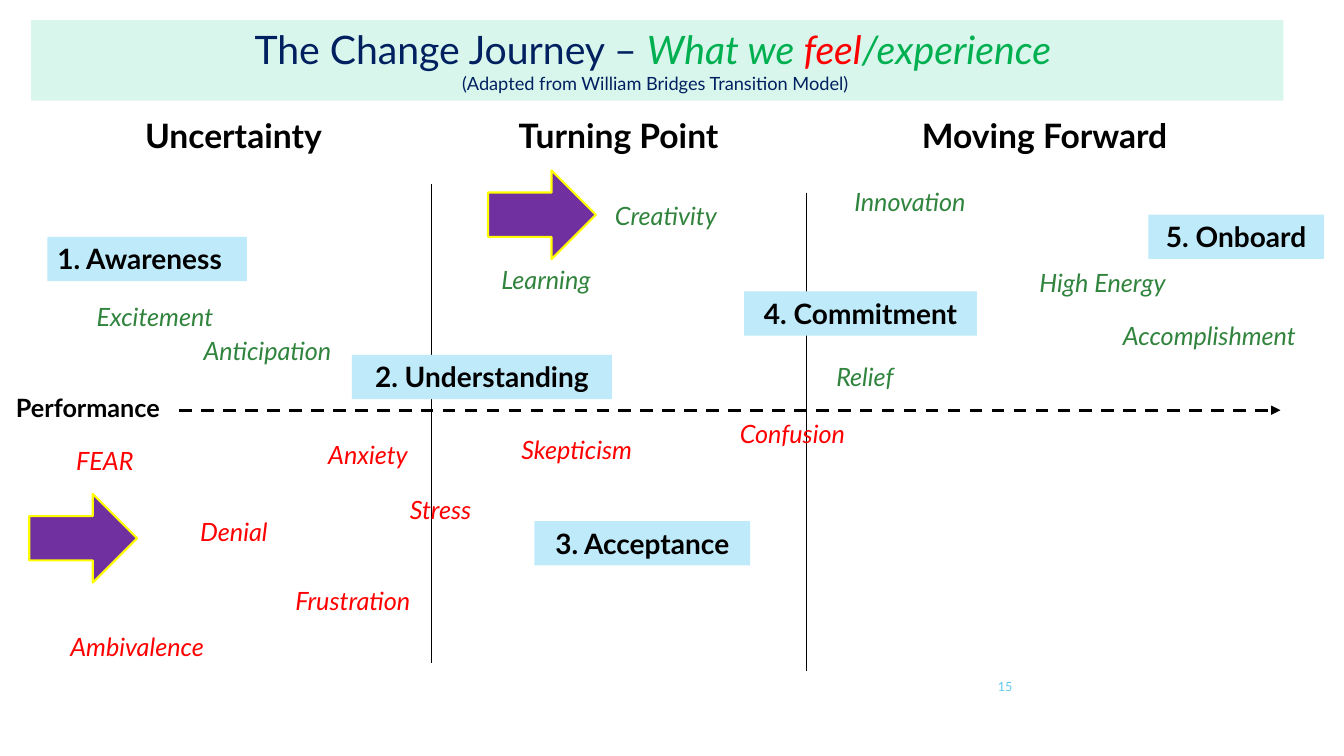
from dataclasses import dataclass

from lxml import etree
from pptx import Presentation
from pptx import util as u
from pptx.dml.color import RGBColor
from pptx.enum import dml, shapes, text
from pptx.oxml.ns import qn

LEFT, CENTER, RIGHT = text.PP_ALIGN.LEFT, text.PP_ALIGN.CENTER, text.PP_ALIGN.RIGHT


@dataclass(frozen=True)
class Theme:
    font: str = "Lato"
    ink: str = "000000"
    navy: str = "002060"
    green: str = "00B050"
    positive: str = "31843D"
    negative: str = "FF0000"
    banner: str = "D9F6EC"
    stage: str = "BFEAF9"
    arrow: str = "7030A0"
    arrow_edge: str = "FFFF00"
    number: str = "5FCBEF"
    title_size: float = 28
    phase_size: float = 24
    stage_size: float = 20
    body_size: float = 18
    credit_size: float = 13
    number_size: float = 9


class JourneyPage:
    def __init__(self, deck, theme):
        self.theme = theme
        self.page = deck.slides.add_slide(deck.slide_layouts[6])

    def style(self, font, size, color, bold=False, italic=False):
        font.name = self.theme.font
        font.size = u.Pt(size)
        font.bold = bold
        font.italic = italic
        font.color.rgb = RGBColor.from_string(color)

    def shape(self, kind, place, fill, edge=None):
        shape = self.page.shapes.add_shape(kind, *map(u.Inches, place))
        shape.shadow.inherit = False
        shape.fill.solid()
        shape.fill.fore_color.rgb = RGBColor.from_string(fill)
        if edge:
            shape.line.color.rgb = RGBColor.from_string(edge)
            shape.line.width = u.Pt(1.5)
        else:
            shape.line.fill.background()
        return shape

    def set_words(self, box, words, size, color, align=CENTER, anchor=text.MSO_ANCHOR.TOP, **look):
        box.text_frame.word_wrap = True
        box.text_frame.vertical_anchor = anchor
        para = box.text_frame.paragraphs[0]
        para.text = words
        para.alignment = align
        self.style(para.font, size, color, **look)

    def label(self, place, words, size, color, **look):
        box = self.page.shapes.add_textbox(*map(u.Inches, place))
        self.set_words(box, words, size, color, **look)

    def feeling(self, words, left, top, width, color, align=CENTER):
        self.label((left, top, width, 0.4), words, self.theme.body_size, color,
                   align=align, italic=True)

    def stage(self, words, left, top, width, align=CENTER):
        box = self.shape(shapes.MSO_SHAPE.RECTANGLE, (left, top, width, 0.44), self.theme.stage)
        self.set_words(box, words, self.theme.stage_size, self.theme.ink, align=align, bold=True)

    def banner(self, place, lines):
        box = self.shape(shapes.MSO_SHAPE.RECTANGLE, place, self.theme.banner)
        box.text_frame.word_wrap = True
        box.text_frame.vertical_anchor = text.MSO_ANCHOR.TOP
        para = box.text_frame.paragraphs[0]
        para.alignment = CENTER
        for index, line in enumerate(lines):
            if index:
                para.add_line_break()
            for words, size, color, italic in line:
                span = para.add_run()
                span.text = words
                self.style(span.font, size, color, italic=italic)

    def line(self, start, end, width=1, dashed_arrow=False):
        line = self.page.shapes.add_connector(
            shapes.MSO_CONNECTOR.STRAIGHT, *map(u.Inches, start + end))
        line.line.color.rgb = RGBColor.from_string(self.theme.ink)
        line.line.width = u.Pt(width)
        properties = line._element.spPr
        if dashed_arrow:
            line.line.dash_style = dml.MSO_LINE.DASH
            etree.SubElement(properties.find(qn("a:ln")), qn("a:tailEnd"), type="triangle")
        etree.SubElement(properties, qn("a:effectLst"))

    def block_arrow(self, left, top):
        self.shape(shapes.MSO_SHAPE.RIGHT_ARROW, (left, top, 1.07, 0.88),
                   self.theme.arrow, self.theme.arrow_edge)


def main():
    theme = Theme()
    deck = Presentation()
    deck.slide_width, deck.slide_height = u.Inches(13.33), u.Inches(7.5)
    journey = JourneyPage(deck, theme)

    journey.banner((0.31, 0.2, 12.42, 0.8), [
        [("The Change Journey – ", theme.title_size, theme.navy, False),
         ("What we ", theme.title_size, theme.green, True),
         ("feel", theme.title_size, theme.negative, True),
         ("/experience ", theme.title_size, theme.green, True)],
        [("(Adapted from William Bridges Transition Model) ", theme.credit_size, theme.navy, False)],
    ])
    journey.label((9.39, 6.61, 0.75, 0.4), "15", theme.number_size, theme.number,
                  align=RIGHT, anchor=text.MSO_ANCHOR.MIDDLE)

    for words, left, width in [("Uncertainty", 1.22, 2.19), ("Turning Point", 4.96, 2.35),
                               ("Moving Forward", 8.95, 2.82)]:
        journey.label((left, 1.09, width, 0.5), words, theme.phase_size, theme.ink, bold=True)

    for left, top in [(4.28, 1.83), (8, 1.91)]:
        journey.line((left, top), (left, top + 4.75))
    journey.line((1.78, 4.07), (12.7, 4.07), 2.25, dashed_arrow=True)

    for stage in [("1. Awareness", 0.47, 2.35, 1.98, LEFT),
                  ("2. Understanding", 3.49, 3.52, 2.58),
                  ("3. Acceptance", 5.3, 5.17, 2.14),
                  ("4. Commitment", 7.38, 2.89, 2.31),
                  ("5. Onboard", 11.39, 2.13, 1.74)]:
        journey.stage(*stage)

    journey.label((0.06, 3.84, 1.92, 0.4), "Performance", theme.body_size, theme.ink,
                  align=LEFT, bold=True)

    for words, left, top, width, align in [
            ("Excitement", 0.86, 2.94, 1.74, LEFT),
            ("Anticipation", 1.92, 3.28, 1.81, LEFT),
            ("Accomplishment", 10.86, 3.13, 2.27, CENTER),
            ("Innovation", 8.27, 1.8, 1.51, CENTER),
            ("Learning", 4.66, 2.57, 1.51, CENTER),
            ("Creativity", 5.85, 1.94, 1.51, CENTER),
            ("High Energy", 9.89, 2.6, 2.09, CENTER),
            ("Relief", 7.71, 3.54, 1.74, CENTER)]:
        journey.feeling(words, left, top, width, theme.positive, align)

    for words, left, top, width in [
            ("FEAR", 0.17, 4.37, 1.74),
            ("Denial", 1.45, 5.07, 1.74),
            ("Ambivalence ", 0.42, 6.21, 1.94),
            ("Frustration", 2.63, 5.76, 1.74),
            ("Stress", 3.5, 4.86, 1.74),
            ("Anxiety", 2.78, 4.31, 1.74),
            ("Confusion", 6.99, 4.1, 1.74),
            ("Skepticism", 4.85, 4.26, 1.74)]:
        journey.feeling(words, left, top, width, theme.negative)

    for left, top in [(0.29, 4.9), (4.84, 1.69)]:
        journey.block_arrow(left, top)

    deck.save("out.pptx")


if __name__ == "__main__":
    main()
